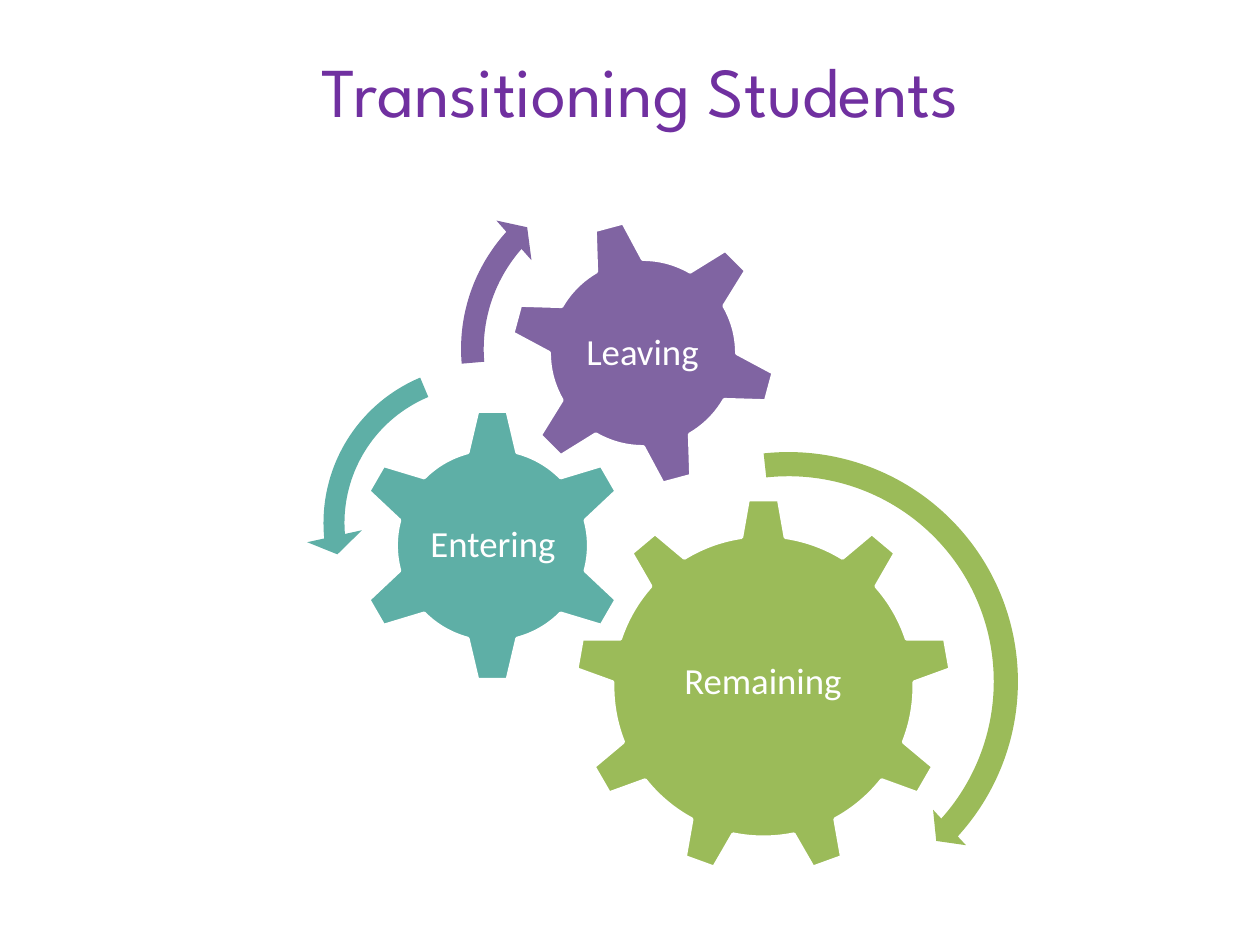
from pptx import Presentation
from pptx import util as u
from pptx.dml.color import RGBColor
from pptx.enum import shapes, text

PX_PER_INCH = 126
COLORS = {
    "title": "7030A0",
    "remaining": "9BBB59",
    "entering": "5EAFA6",
    "leaving": "8064A2",
    "white": "FFFFFF",
}
SHAPE = shapes.MSO_SHAPE


def px(n):
    """Convert pixels to EMU."""
    return u.Emu(round(n * 914400 / PX_PER_INCH))


def rgb(name):
    return RGBColor.from_string(COLORS[name])


class Deck:
    """Holds the style and the current slide."""

    def __init__(self, width, height):
        self.prs = Presentation()
        self.prs.slide_width, self.prs.slide_height = px(width), px(height)
        self.s = self.prs.slides.add_slide(self.prs.slide_layouts[5])

    def set_text(self, tf, words, font, size, color):
        tf.word_wrap = True
        tf.auto_size = text.MSO_AUTO_SIZE.NONE
        tf.vertical_anchor = text.MSO_ANCHOR.MIDDLE
        p = tf.paragraphs[0]
        p.text = words
        p.alignment = text.PP_ALIGN.CENTER
        p.font.name, p.font.size = font, u.Pt(size)
        p.font.color.rgb = rgb(color)
        return p

    def title(self, words, x, y, w, h):
        sp = self.s.shapes.title
        sp.left, sp.top, sp.width, sp.height = map(px, (x, y, w, h))
        self.set_text(sp.text_frame, words, "League Spartan", 40, "title")

    def square_shape(self, kind, x, y, size, color):
        sp = self.s.shapes.add_shape(kind, px(x), px(y), px(size), px(size))
        sp.shadow.inherit = False
        sp.fill.solid()
        sp.fill.fore_color.rgb = rgb(color)
        return sp

    def gear(self, kind, x, y, size, color, rotation=0):
        sp = self.square_shape(kind, x, y, size, color)
        sp.rotation = rotation
        sp.line.color.rgb = rgb("white")
        sp.line.width = u.Pt(2)

    def label(self, words, x, y, w, h):
        tf = self.s.shapes.add_textbox(*map(px, (x, y, w, h))).text_frame
        tf.margin_left = tf.margin_right = px(4)
        tf.margin_top = tf.margin_bottom = px(4)
        p = self.set_text(tf, words, "Calibri", 21, "white")
        p.line_spacing = 0.9

    def arc_arrow(self, kind, x, y, size, color, adjustments):
        sp = self.square_shape(kind, x, y, size, color)
        sp.line.fill.background()
        for i, value in enumerate(adjustments):
            sp.adjustments[i] = value


def main():
    deck = Deck(1260, 945)
    deck.title("Transitioning Students", 73, 32, 1134, 116)

    gears = [
        ("Remaining", SHAPE.GEAR_9, (575, 498, 377), 0, (650, 586, 226, 194)),
        ("Entering", SHAPE.GEAR_6, (355, 408, 275), 0, (425, 478, 136, 135)),
        ("Leaving", SHAPE.GEAR_6, (509, 219, 268), 345, (567, 278, 151, 151)),
    ]
    for words, kind, place, rotation, label_box in gears:
        deck.gear(kind, *place, words.lower(), rotation)
        deck.label(words, *label_box)

    # Adjustments: thickness, head angle, end angle, start angle, head width
    arrows = [
        ("remaining", SHAPE.CIRCULAR_ARROW, (547, 440, 483),
         (0.05, 2.99, 25.32, 158.27, 0.05)),
        ("entering", SHAPE.LEFT_CIRCULAR_ARROW, (306, 348, 350),
         (0.06, 4.3, 104.89, 148.38, 0.08)),
        ("leaving", SHAPE.CIRCULAR_ARROW, (446, 160, 378),
         (0.06, 3.94, 133.14, 105.08, 0.07)),
    ]
    for color, kind, place, adjustments in arrows:
        deck.arc_arrow(kind, *place, color, adjustments)

    deck.prs.save("out.pptx")


if __name__ == "__main__":
    main()
